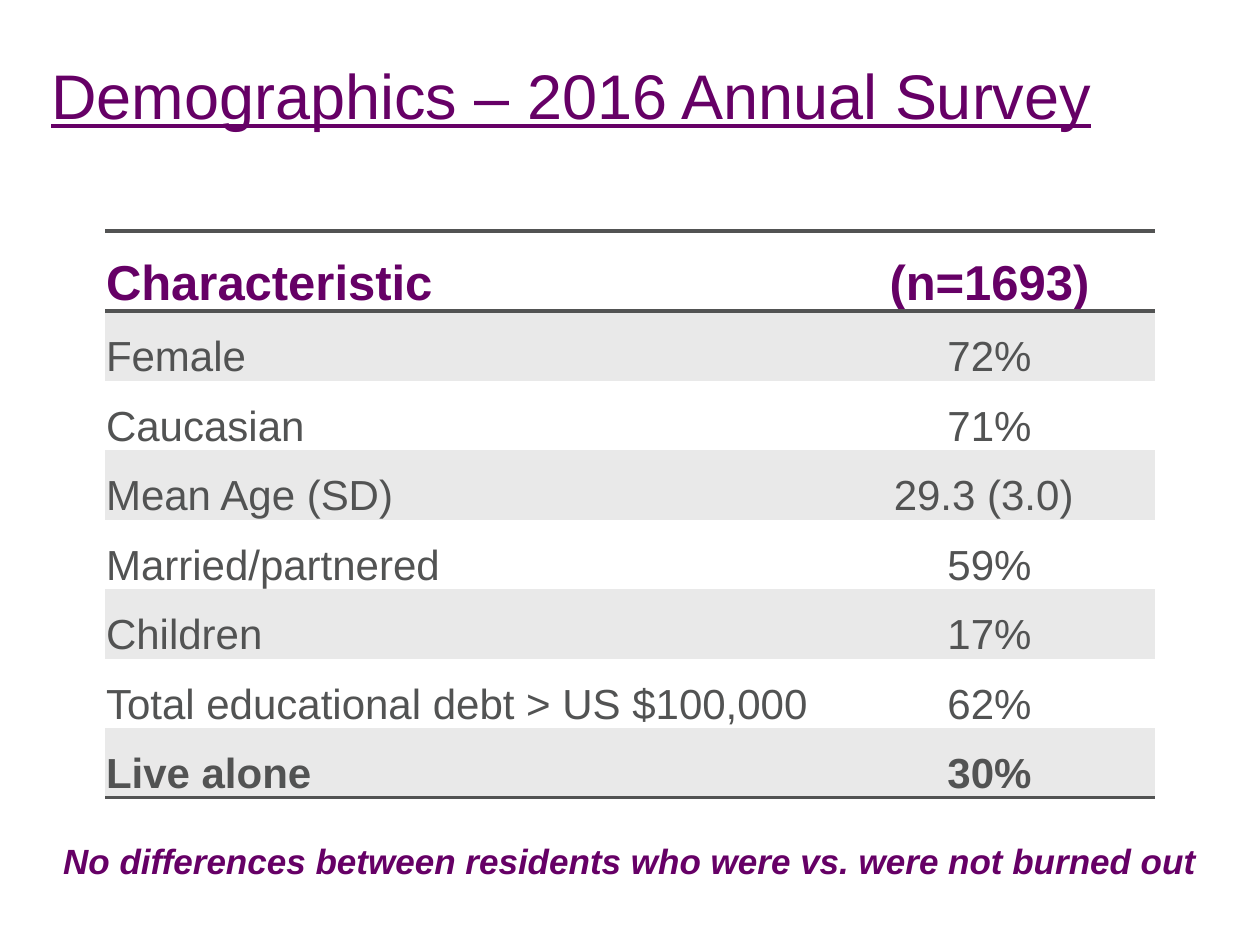
from dataclasses import dataclass

from lxml import etree
from pptx import Presentation
from pptx.dml.color import RGBColor
from pptx.enum import text
from pptx.oxml.ns import qn
from pptx import util as u

SCALE = 914400 / 126  # EMU per px
PLUM = RGBColor(0x66, 0x00, 0x66)
GREY = RGBColor(0x52, 0x53, 0x53)
BAND = RGBColor(0xE9, 0xE9, 0xE9)
WHITE = RGBColor(0xFF, 0xFF, 0xFF)
FONT = "Arial"
PLAIN = "{2D5ABB26-0587-4C30-8999-92F81FD0307C}"  # no style, no grid
LEFT, MID = text.PP_ALIGN.LEFT, text.PP_ALIGN.CENTER


@dataclass(frozen=True)
class Style:
    size: int
    color: RGBColor
    bold: bool = False
    italic: bool = False
    under: bool = False


@dataclass(frozen=True)
class Label:
    words: str
    box: tuple[int, int, int, int]
    inset: int
    align: text.PP_ALIGN
    style: Style


@dataclass(frozen=True)
class Row:
    name: str
    value: str
    style: Style
    edges: str = ""


HEAD = Style(28, PLUM, bold=True)
BODY = Style(24, GREY)
STRONG = Style(24, GREY, bold=True)

LABELS = [
    Label("Demographics – 2016 Annual Survey", (39, 43, 1166, 120), 13, LEFT,
          Style(36, PLUM, under=True)),
    Label("No differences between residents who were vs. were not burned out",
          (0, 829, 1260, 94), 10, MID, Style(20, PLUM, bold=True, italic=True)),
]
ROWS = [
    Row("Characteristic", "(n=1693)", HEAD, "TB"),
    Row("Female", "72%", BODY),
    Row("Caucasian", "71%", BODY),
    Row("Mean Age (SD)", "29.3 (3.0) ", BODY),
    Row("Married/partnered", "59%", BODY),
    Row("Children", "17%", BODY),
    Row("Total educational debt > US $100,000", "62%", BODY),
    Row("Live alone", "30%", STRONG, "B"),
]
COLS = (719, 331)
LEAD, TALL = 80, 567  # header row and whole table heights


def px(n: float) -> u.Emu:
    return u.Emu(round(n * SCALE))


def write(frame, words: str, align: text.PP_ALIGN, style: Style) -> None:
    para = frame.paragraphs[0]
    para.text = words
    para.alignment = align
    font = para.font
    font.name, font.size = FONT, u.Pt(style.size)
    font.color.rgb = style.color
    font.bold, font.italic = style.bold, style.italic
    font.underline = style.under


def label(slide, item: Label) -> None:
    frame = slide.shapes.add_textbox(*map(px, item.box)).text_frame
    frame.word_wrap = True
    frame.margin_top = px(item.inset)
    write(frame, item.words, item.align, item.style)


def rule(cell, edge: str, spot: int) -> None:
    """Draw one border of a cell; borders must come before its fill."""
    props = cell._tc.get_or_add_tcPr()
    line = etree.Element(qn(f"a:ln{edge}"), w=str(u.Pt(2)))
    fill = etree.SubElement(line, qn("a:solidFill"))
    etree.SubElement(fill, qn("a:srgbClr"), val=str(GREY))
    props.insert(spot, line)


def grid(slide, rows: list[Row]) -> None:
    shape = slide.shapes.add_table(
        len(rows), len(COLS), px(105), px(231), px(sum(COLS)), px(TALL))
    table = shape.table
    table.first_row = table.horz_banding = False
    table._tbl.tblPr.find(qn("a:tableStyleId")).text = PLAIN
    for col, width in zip(table.columns, COLS):
        col.width = px(width)
    step = (TALL - LEAD) / (len(rows) - 1)
    for i, row in enumerate(rows):
        table.rows[i].height = px(step if i else LEAD)
        for j, (words, align) in enumerate([(row.name, LEFT), (row.value, MID)]):
            cell = table.cell(i, j)
            cell.margin_left = cell.margin_right = cell.margin_top = px(1)
            cell.margin_bottom = 0
            cell.vertical_anchor = text.MSO_ANCHOR.BOTTOM
            cell.fill.solid()
            cell.fill.fore_color.rgb = BAND if i % 2 else WHITE
            write(cell.text_frame, words, align, row.style)
            for spot, edge in enumerate(row.edges):
                rule(cell, edge, spot)


def main() -> None:
    deck = Presentation()
    deck.slide_width, deck.slide_height = px(1260), px(945)
    slide = deck.slides.add_slide(deck.slide_layouts[6])
    for item in LABELS:
        label(slide, item)
    grid(slide, ROWS)
    deck.save("out.pptx")


if __name__ == "__main__":
    main()
